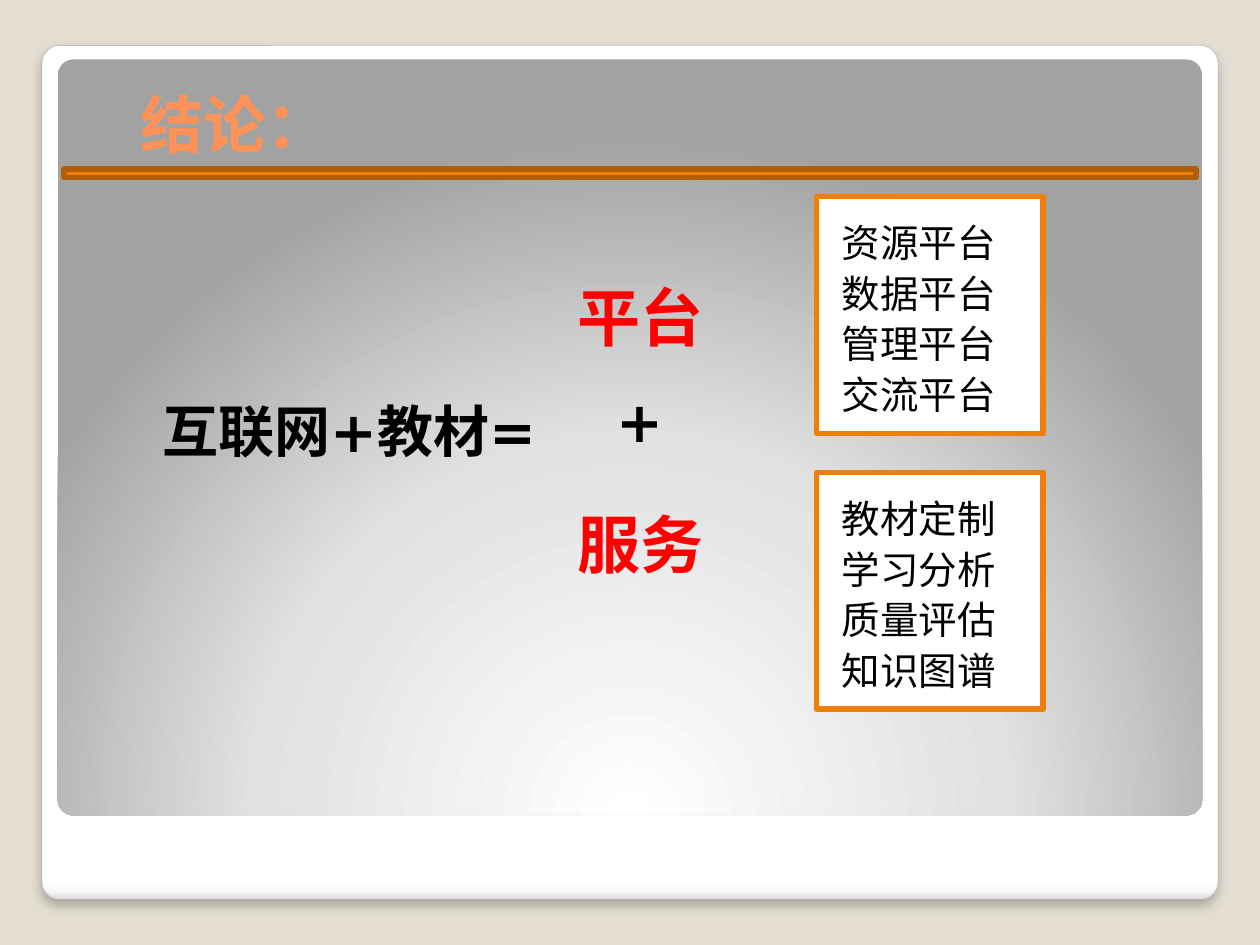
"""Build the conclusion slide: internet plus textbook equals platform plus service."""
from pptx import Presentation
from pptx.dml.color import RGBColor
from pptx.enum.shapes import MSO_SHAPE
from pptx.enum.text import MSO_ANCHOR
from pptx.oxml import parse_xml
from pptx.oxml.ns import nsdecls, qn
from pptx.util import Pt

FONT = "DejaVu Sans"
SAND = RGBColor(0xE3, 0xDE, 0xD1)
WHITE = RGBColor(0xFF, 0xFF, 0xFF)
BLACK = RGBColor(0, 0, 0)
RED = RGBColor(0xFF, 0, 0)
PEACH = RGBColor(0xFF, 0x92, 0x58)
ORANGE = RGBColor(0xF0, 0x7F, 0x09)
BROWN = RGBColor(0xB2, 0x5E, 0x07)
GREY = RGBColor(0xA4, 0xA4, 0xA4)
CARD = [(0, WHITE), (98, WHITE), (99, RGBColor(0xF7, 0xF7, 0xF7)), (100, RGBColor(0xDA, 0xDA, 0xDA))]
PANEL = [(0, WHITE), (55, RGBColor(0xE1, 0xE1, 0xE1)), (100, RGBColor(0xA2, 0xA2, 0xA2))]
DOWN = '<a:lin ang="5400000" scaled="0"/>'
GLOW = '<a:path path="circle"><a:fillToRect l="50000" t="175000" r="50000" b="-75000"/></a:path>'

TITLE = "结论："
TERMS = [
    ("互联网+教材=", (78.5, 219.6, 264.2, 67.7), 32, BLACK),
    ("平台", (315.4, 151.9, 106.6, 56.2), 36, RED),
    ("+", (337.7, 213.8, 106.6, 56.2), 32, BLACK),
    ("服务", (315.4, 281.5, 106.6, 56.2), 36, RED),
]
LISTS = [
    ["资源平台", "数据平台", "管理平台", "交流平台"],
    ["教材定制", "学习分析", "质量评估", "知识图谱"],
]
LEFT, TOP, WIDE, HIGH, STEP, DROP = 466.6, 112.3, 129.6, 135.4, 157.7, 5.8


def add_box(slide, box, fill=None, line=None, width=3.35, round_by=None):
    kind = MSO_SHAPE.RECTANGLE if round_by is None else MSO_SHAPE.ROUNDED_RECTANGLE
    shape = slide.shapes.add_shape(kind, *map(Pt, box))
    shape.shadow.inherit = False
    if round_by is not None:
        shape.adjustments[0] = round_by
    if fill is not None:
        shape.fill.solid()
        shape.fill.fore_color.rgb = fill
    if line is None:
        shape.line.fill.background()
    else:
        shape.line.color.rgb = line
        shape.line.width = Pt(width)
    return shape


def add_blend(shape, stops, course):
    marks = "".join(
        f'<a:gs pos="{spot * 1000}"><a:srgbClr val="{tone}"/></a:gs>' for spot, tone in stops
    )
    blend = f'<a:gradFill {nsdecls("a")} rotWithShape="1"><a:gsLst>{marks}</a:gsLst>{course}</a:gradFill>'
    shape.element.spPr.find(qn("a:prstGeom")).addnext(parse_xml(blend))


def add_shade(shape):
    shade = (
        f'<a:outerShdw {nsdecls("a")} blurRad="{Pt(6)}" dist="{Pt(4)}" dir="5400000" rotWithShape="0">'
        '<a:srgbClr val="000000"><a:alpha val="25000"/></a:srgbClr></a:outerShdw>'
    )
    shape.element.spPr.find(qn("a:effectLst")).append(parse_xml(shade))


def add_text(slide, lines, box, size=22, color=BLACK, bold=False, hang=20.9, before=2.5,
             inset=(14.4, 7.2, 7.2, 3.6), anchor=MSO_ANCHOR.TOP):
    frame = slide.shapes.add_textbox(*map(Pt, box)).text_frame
    frame.word_wrap = True
    frame.vertical_anchor = anchor
    frame.margin_left, frame.margin_top, frame.margin_right, frame.margin_bottom = map(Pt, inset)
    for spot, line in enumerate(lines):
        para = frame.add_paragraph() if spot else frame.paragraphs[0]
        para.space_before = Pt(before)
        props = para._p.get_or_add_pPr()
        props.set("marL", str(Pt(hang)))
        props.set("indent", str(-Pt(hang)))
        run = para.add_run()
        run.text = line
        font = run.font
        font.name, font.size, font.bold = FONT, Pt(size), bold
        font.color.rgb = color
        east = parse_xml(f'<a:ea {nsdecls("a")} typeface="{FONT}"/>')
        run._r.rPr.find(qn("a:latin")).addnext(east)


def main():
    deck = Presentation()
    deck.slide_width, deck.slide_height = Pt(720), Pt(540)
    slide = deck.slides.add_slide(deck.slide_layouts[6])
    slide.background.fill.solid()
    slide.background.fill.fore_color.rgb = SAND

    card = add_box(slide, (24, 26, 672, 488), line=GREY, width=0.16, round_by=0.021)
    add_blend(card, CARD, DOWN)
    add_shade(card)
    panel = add_box(slide, (33, 34, 654, 432), round_by=0.021)
    add_blend(panel, PANEL, GLOW)

    add_text(slide, [TITLE], (73.4, 22.3, 275.8, 73.4), size=36, color=PEACH, bold=True,
             hang=0, before=0, inset=(7.2, 3.6, 7.2, 3.6), anchor=MSO_ANCHOR.BOTTOM)
    for text, box, size, color in TERMS:
        add_text(slide, [text], box, size=size, color=color, bold=True)
    for spot, lines in enumerate(LISTS):
        top = TOP + spot * STEP
        add_box(slide, (LEFT, top, WIDE, HIGH), fill=WHITE, line=ORANGE)
        add_text(slide, lines, (LEFT, top + DROP, WIDE, HIGH))
    add_box(slide, (36.7, 96.5, 646.6, 5), fill=ORANGE, line=BROWN)
    deck.save("out.pptx")


if __name__ == "__main__":
    main()
